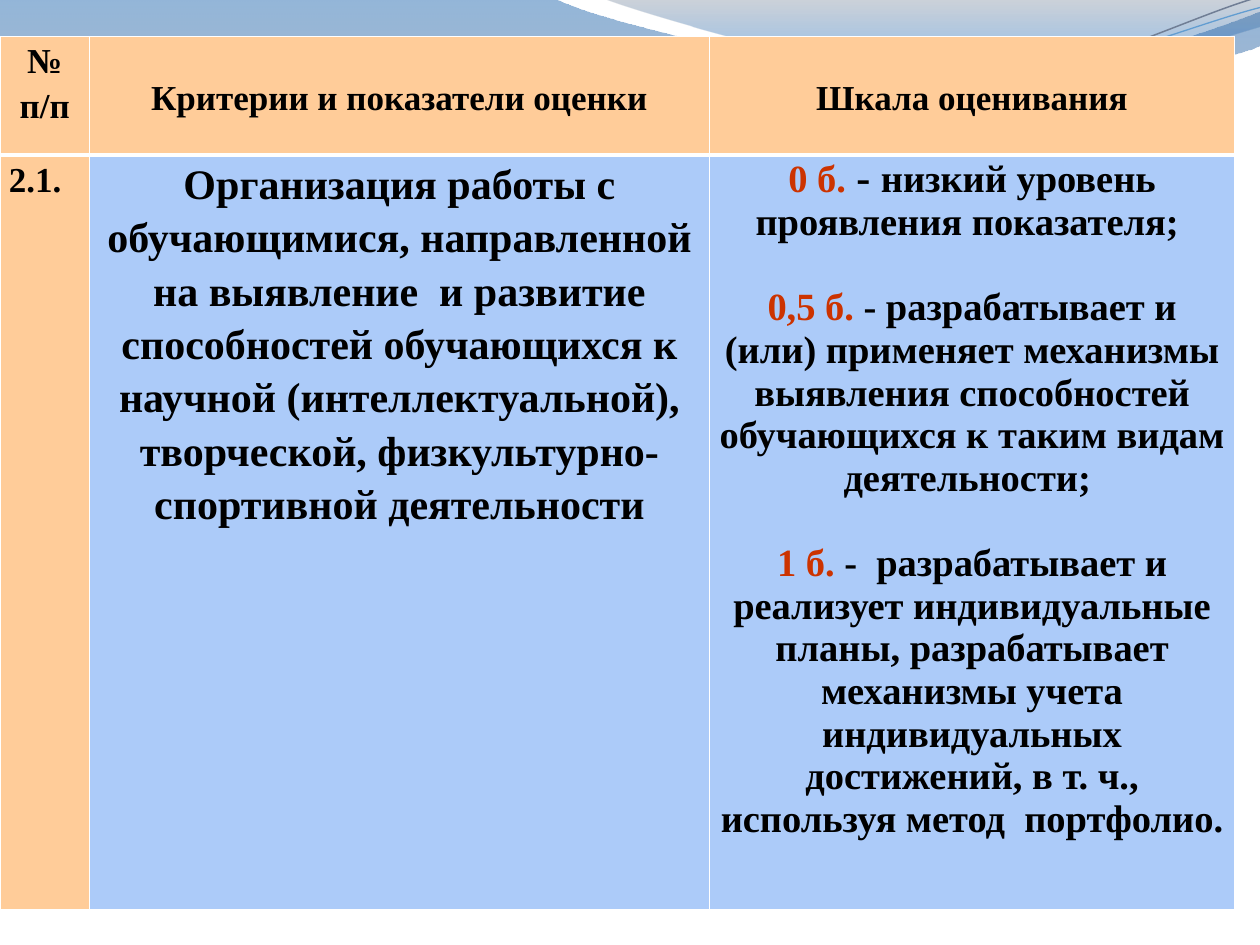
from math import cos, radians, sin

from lxml.etree import Element, SubElement
from pptx import Presentation
from pptx.dml.color import RGBColor
from pptx.enum.text import MSO_ANCHOR, PP_ALIGN
from pptx.oxml.ns import qn
from pptx.util import Inches, Pt

COLORS = {
    "white": "FFFFFF", "black": "000000", "red": "CC3300",
    "peach": "FFCC99", "blue": "ACCBF9",
    "deep": "125EAA", "steel": "697FA4", "slate": "596982",
    "bright": "0670DA", "gray": "707E95", "sky": "629DD1",
}
FONT = "Times New Roman"
TILT = -2.7

# Each wave: start point, then lines (one point) and curves (three points)
BAND = [[(0, -0.01)], [(4.4, -0.01)],
        [(4.76, 0.17), (6.64, 0.63), (7.58, 0.63)],
        [(8.53, 0.63), (9.58, 0.26), (10, 0.09)], [(10.01, 0.36)],
        [(9.83, 0.44), (8.7, 0.76), (7.46, 0.75)],
        [(6.22, 0.75), (3.82, 0.28), (2.57, 0.34)],
        [(1.29, 0.35), (0.46, 0.83), (-0.01, 1.13)]]
CREST = [[(4.79, -0.01)], [(5.09, 0.11), (6.82, 0.62), (7.69, 0.65)],
         [(8.56, 0.69), (9.61, 0.32), (10, 0.21)], [(10, 0)]]
UPPER = [[(0, 1.11)], [(0.48, 0.93), (1.58, 0.57), (2.77, 0.52)],
         [(3.95, 0.47), (5.93, 0.89), (7.13, 0.8)],
         [(8.33, 0.71), (9.38, 0.15), (9.98, -0.02)]]
LOWER = [[(0, 1.04)], [(0.47, 0.96), (1.64, 0.61), (2.83, 0.56)],
         [(4.03, 0.51), (5.97, 0.83), (7.17, 0.75)],
         [(8.36, 0.67), (9.41, 0.21), (10, 0.06)]]

SCALE = [
    [("0 б.", 22, "red"), (" - ", 24, "black"),
     ("низкий уровень проявления показателя; ", 22, "black")],
    [("0,5 б.", 22, "red"),
     (" - разрабатывает и (или) применяет механизмы выявления способностей "
      "обучающихся к таким видам деятельности; ", 22, "black")],
    [("1 б.", 22, "red"),
     (" -  разрабатывает и реализует индивидуальные планы, разрабатывает "
      "механизмы учета индивидуальных достижений, в т. ч., используя метод  "
      "портфолио.", 22, "black")],
]
TASK = ("Организация работы с обучающимися, направленной на выявление  и "
        "развитие способностей обучающихся к научной (интеллектуальной), "
        "творческой, физкультурно-спортивной деятельности")


def rgb(name):
    return RGBColor.from_string(COLORS[name])


def turn(path, angle, mid):
    """Turn all points of a path clockwise about mid."""
    c, s = cos(radians(angle)), sin(radians(angle))
    return [[(mid[0] + (x - mid[0]) * c - (y - mid[1]) * s,
              mid[1] + (x - mid[0]) * s + (y - mid[1]) * c)
             for x, y in part] for part in path]


def add_wave(slide, left, top, path, close):
    parts = [[(left + Inches(x), top + Inches(y)) for x, y in part]
             for part in path]
    ends = [part[-1] for part in parts]
    pen = slide.shapes.build_freeform(*ends[0])
    pen.add_line_segments(ends[1:], close=close)
    wave = pen.convert_to_shape()
    wave.shadow.inherit = False
    # Bend the segments that have control points
    lines = list(wave.element.iter(qn("a:lnTo")))
    for line, part in zip(lines, parts[1:]):
        if len(part) == 3:
            line.tag = qn("a:cubicBezTo")
            for i, (x, y) in enumerate(part[:2]):
                line.insert(i, Element(qn("a:pt"),
                                       x=str(x - pen.shape_offset_x),
                                       y=str(y - pen.shape_offset_y)))
    return wave


def add_waves(slide, left, top):
    # Shaded bands
    for path, stops in (
            (BAND, [("deep", 0, 45), ("steel", 1, 55)]),
            (CREST, [("slate", 0, 30), ("bright", 0.8, 45)])):
        wave = add_wave(slide, left, top, path, True)
        wave.line.fill.background()
        wave.fill.gradient()
        wave.fill.gradient_angle = 270
        for stop, (color, place, _) in zip(wave.fill.gradient_stops, stops):
            stop.color.rgb = rgb(color)
            stop.position = place
        grad = wave.element.spPr.find(qn("a:gradFill"))
        for tint, (_, _, alpha) in zip(grad.iter(qn("a:srgbClr")), stops):
            SubElement(tint, qn("a:alpha"), val=str(alpha * 1000))
    # Thin tilted lines
    for path, mid, color, width in ((UPPER, (4.99, 0.57), "gray", 0.85),
                                    (LOWER, (5, 0.59), "sky", 0.75)):
        wave = add_wave(slide, left, top, turn(path, -TILT, mid), False)
        wave.rotation = TILT
        wave.fill.background()
        wave.line.color.rgb = rgb(color)
        wave.line.width = Pt(width)


def style_cell(cell, fill, top, bottom):
    props = cell._tc.get_or_add_tcPr()
    for side, width in (("L", 1), ("R", 1), ("T", top), ("B", bottom)):
        line = SubElement(props, qn("a:ln" + side), w=str(Pt(width)))
        paint = SubElement(line, qn("a:solidFill"))
        SubElement(paint, qn("a:srgbClr"), val=COLORS["white"])
    cell.fill.solid()
    cell.fill.fore_color.rgb = rgb(fill)
    cell.margin_left = cell.margin_right = Inches(0.07)
    cell.margin_top = cell.margin_bottom = 0


def style_text(para, align=PP_ALIGN.CENTER, size=20):
    para.alignment = align
    para.line_spacing = 1.15
    font = para.font
    font.name, font.size, font.bold = FONT, Pt(size), True
    font.color.rgb = rgb("black")


def fill_scale(frame):
    for i, parts in enumerate(SCALE):
        para = frame.add_paragraph() if i else frame.paragraphs[0]
        para.alignment = PP_ALIGN.CENTER
        para.font.name, para.font.bold = FONT, True
        if i:
            para.space_before = Pt(24.4)
        for text, size, color in parts:
            run = para.add_run()
            run.text = text
            run.font.size = Pt(size)
            run.font.color.rgb = rgb(color)


def add_grid(slide, left, top, width, height):
    table = slide.shapes.add_table(2, 3, left, top, width, height).table
    for col, size in zip(table.columns, (0.71, 4.92, 4.17)):
        col.width = Inches(size)
    table.rows[0].height = Inches(0.94)
    table.rows[1].height = height - Inches(0.94)

    # Header row
    heads = ("№\nп/п", "Критерии и показатели оценки", "Шкала оценивания")
    for i, text in enumerate(heads):
        cell = table.cell(0, i)
        style_cell(cell, "peach", 1, 3)
        cell.text = text
        if i:
            cell.vertical_anchor = MSO_ANCHOR.MIDDLE
        for para in cell.text_frame.paragraphs:
            style_text(para)

    # Body row
    number, task, scale = (table.cell(1, i) for i in range(3))
    for cell, fill in ((number, "peach"), (task, "blue"), (scale, "blue")):
        style_cell(cell, fill, 3, 1)
    number.text = "2.1."
    style_text(number.text_frame.paragraphs[0], PP_ALIGN.LEFT)
    task.text = TASK
    style_text(task.text_frame.paragraphs[0], size=24)
    fill_scale(scale.text_frame)


def main():
    deck = Presentation()
    deck.slide_width, deck.slide_height = Inches(10), Inches(7.5)
    slide = deck.slides.add_slide(deck.slide_layouts[6])
    add_waves(slide, 0, 0)
    add_grid(slide, 0, Inches(0.29), Inches(9.8), Inches(6.93))
    deck.save("out.pptx")


if __name__ == "__main__":
    main()
